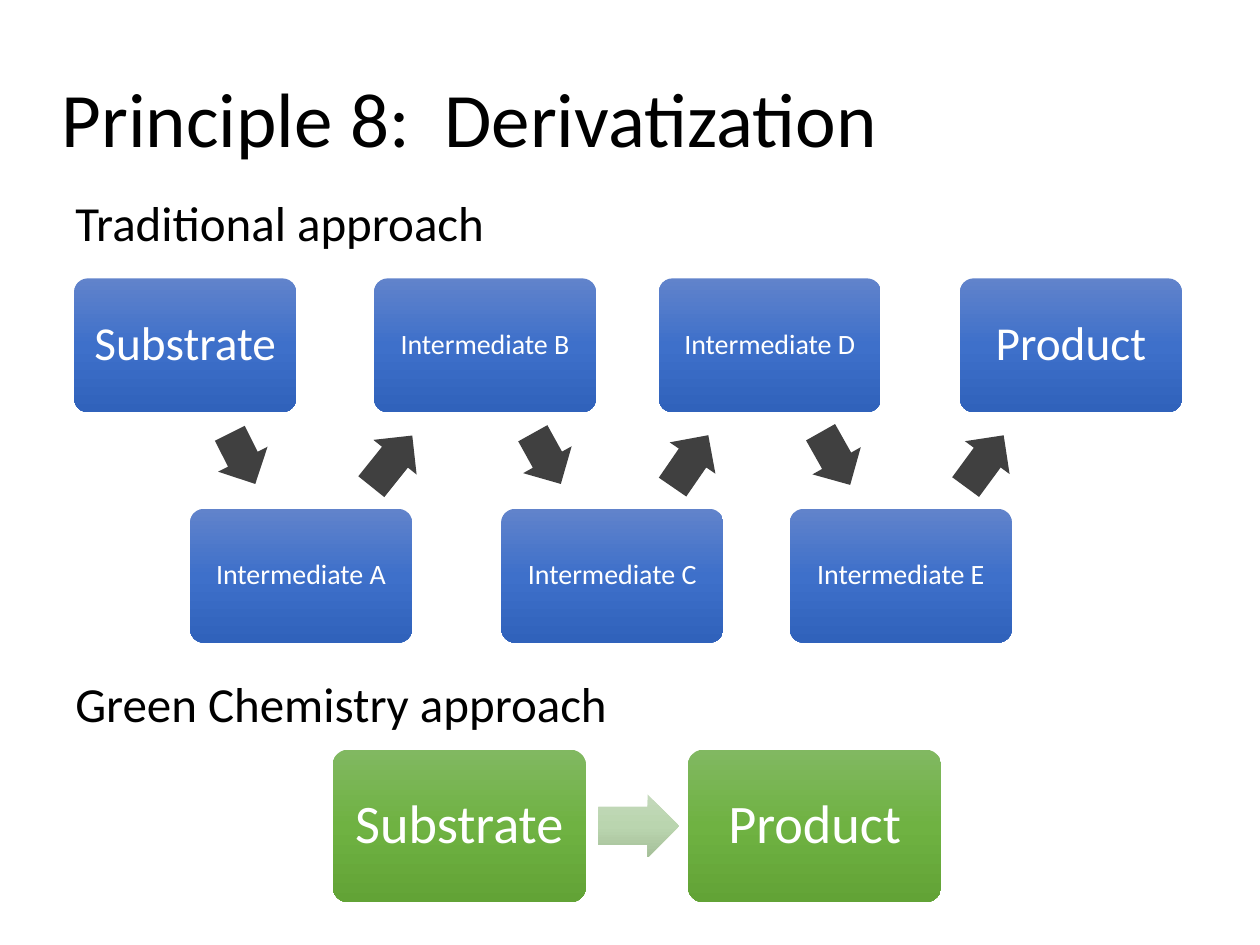
from copy import deepcopy

from pptx import Presentation
from pptx.dml.color import RGBColor
from pptx.enum.shapes import MSO_SHAPE as Shape
from pptx.enum.text import MSO_ANCHOR as Anchor, MSO_AUTO_SIZE as AutoSize, PP_ALIGN as Align
from pptx.util import Inches, Pt

BLACK = RGBColor(0x00, 0x00, 0x00)
WHITE = RGBColor(0xFF, 0xFF, 0xFF)
DARK_GREY = RGBColor(0x40, 0x40, 0x40)
BLUES = [RGBColor(0x61, 0x83, 0xCB), RGBColor(0x3E, 0x70, 0xCA), RGBColor(0x30, 0x62, 0xBB)]
GREENS = [RGBColor(0x81, 0xB8, 0x61), RGBColor(0x6F, 0xB2, 0x42), RGBColor(0x62, 0xA3, 0x36)]
PALE_GREENS = [RGBColor(0xC4, 0xD9, 0xBB), RGBColor(0xBA, 0xD5, 0xAF), RGBColor(0xA5, 0xBF, 0x99)]

# Compound: label, left within the region, text size, inset
COMPOUNDS = [
    ("Substrate", 0, 27, 0.11),
    ("Intermediate A", 0.92, 16, 0.07),
    ("Intermediate B", 2.38, 16, 0.07),
    ("Intermediate C", 3.39, 16, 0.07),
    ("Intermediate D", 4.64, 16, 0.07),
    ("Intermediate E", 5.68, 16, 0.07),
    ("Product", 7.03, 27, 0.11),
]
# Reaction arrow: left within the region, width, rotation
REACTIONS = [
    (1.11, 0.45, 63.3), (2.26, 0.52, 308.7),
    (3.52, 0.46, 61), (4.64, 0.5, 304.5),
    (5.8, 0.48, 60.6), (6.97, 0.51, 306.3),
]


def set_all(target, values):
    for name, value in values.items():
        setattr(target, name, value)


def write(holder, text, size, color, frame_format, paragraph_format):
    frame = holder.text_frame
    set_all(frame, frame_format)
    paragraph = frame.paragraphs[0]
    paragraph.text = text
    set_all(paragraph, paragraph_format)
    set_all(paragraph.font, {"name": "Calibri", "size": Pt(size)})
    paragraph.font.color.rgb = color


def add_plain_shape(shapes, preset, box, adjustments):
    shape = shapes.add_shape(preset, *map(Inches, box))
    shape.shadow.inherit = False
    shape.line.fill.background()
    for index, value in enumerate(adjustments):
        shape.adjustments[index] = value
    return shape


def shade_down(shape, colors):
    """Fill from top to bottom through three evenly spaced colours."""
    fill = shape.fill
    fill.gradient()
    fill.gradient_angle = 270
    stop_list = shape.element.spPr.find(".//{*}gsLst")
    stop_list.append(deepcopy(stop_list[-1]))
    for index, (stop, color) in enumerate(zip(fill.gradient_stops, colors)):
        stop.position = index / 2
        stop.color.rgb = color


def add_compound(shapes, box, label, size, inset, colors):
    compound = add_plain_shape(shapes, Shape.ROUNDED_RECTANGLE, box, [0.1])
    shade_down(compound, colors)
    sides = ("margin_left", "margin_top", "margin_right", "margin_bottom")
    frame_format = dict.fromkeys(sides, Inches(inset))
    frame_format.update(word_wrap=True, vertical_anchor=Anchor.MIDDLE)
    write(compound, label, size, WHITE, frame_format,
          {"alignment": Align.CENTER, "line_spacing": 0.9})


def add_arrow(shapes, box):
    return add_plain_shape(shapes, Shape.RIGHT_ARROW, box, [0.6, 0.5])


def add_title(slide, left, top, width, height):
    title = slide.shapes.add_textbox(*map(Inches, (left, top, width, height)))
    write(title, "Principle 8:  Derivatization", 44, BLACK,
          {"word_wrap": True, "vertical_anchor": Anchor.MIDDLE, "margin_left": Inches(0.49)},
          {"line_spacing": 0.9})


def add_heading(slide, text, left, top, width, height):
    heading = slide.shapes.add_textbox(*map(Inches, (left, top, width, height)))
    write(heading, text, 28, BLACK,
          {"word_wrap": False, "auto_size": AutoSize.SHAPE_TO_FIT_TEXT}, {})


def add_traditional_route(slide, left, top, width, height):
    """Compounds alternate between an upper and a lower row."""
    shapes = slide.shapes.add_group_shape().shapes
    box_width, box_height = width / 5, height * 0.367
    for step, (label, x, size, inset) in enumerate(COMPOUNDS):
        y = top + step % 2 * (height - box_height)
        add_compound(shapes, (left + x, y, box_width, box_height), label, size, inset, BLUES)
    for step, (x, arrow_width, rotation) in enumerate(REACTIONS):
        y = top + 1.21 + step % 2 * 0.02
        arrow = add_arrow(shapes, (left + x, y, arrow_width, 0.44))
        arrow.rotation = rotation
        arrow.fill.solid()
        arrow.fill.fore_color.rgb = DARK_GREY


def add_green_route(slide, left, top, width, height):
    """Substrate and product at the two ends, one arrow between."""
    shapes = slide.shapes.add_group_shape().shapes
    box_width = 2.01
    for label, x in (("Substrate", left), ("Product", left + width - box_width)):
        add_compound(shapes, (x, top, box_width, height), label, 31, 0.13, GREENS)
    arrow = add_arrow(shapes, (left + box_width + 0.1, top + (height - 0.5) / 2, 0.64, 0.5))
    shade_down(arrow, PALE_GREENS)


def main():
    deck = Presentation()
    deck.slide_width, deck.slide_height = Inches(10), Inches(7.5)
    slide = deck.slides.add_slide(deck.slide_layouts[6])

    add_green_route(slide, 2.64, 5.95, 4.83, 1.21)
    add_traditional_route(slide, 0.59, 2.21, 8.8, 2.89)
    add_title(slide, 0, 0.35, 9.1, 1.24)
    add_heading(slide, "Traditional approach", 0.5, 1.48, 3.48, 0.57)
    add_heading(slide, "Green Chemistry approach", 0.5, 5.3, 4.47, 0.57)

    deck.save("out.pptx")


if __name__ == "__main__":
    main()
